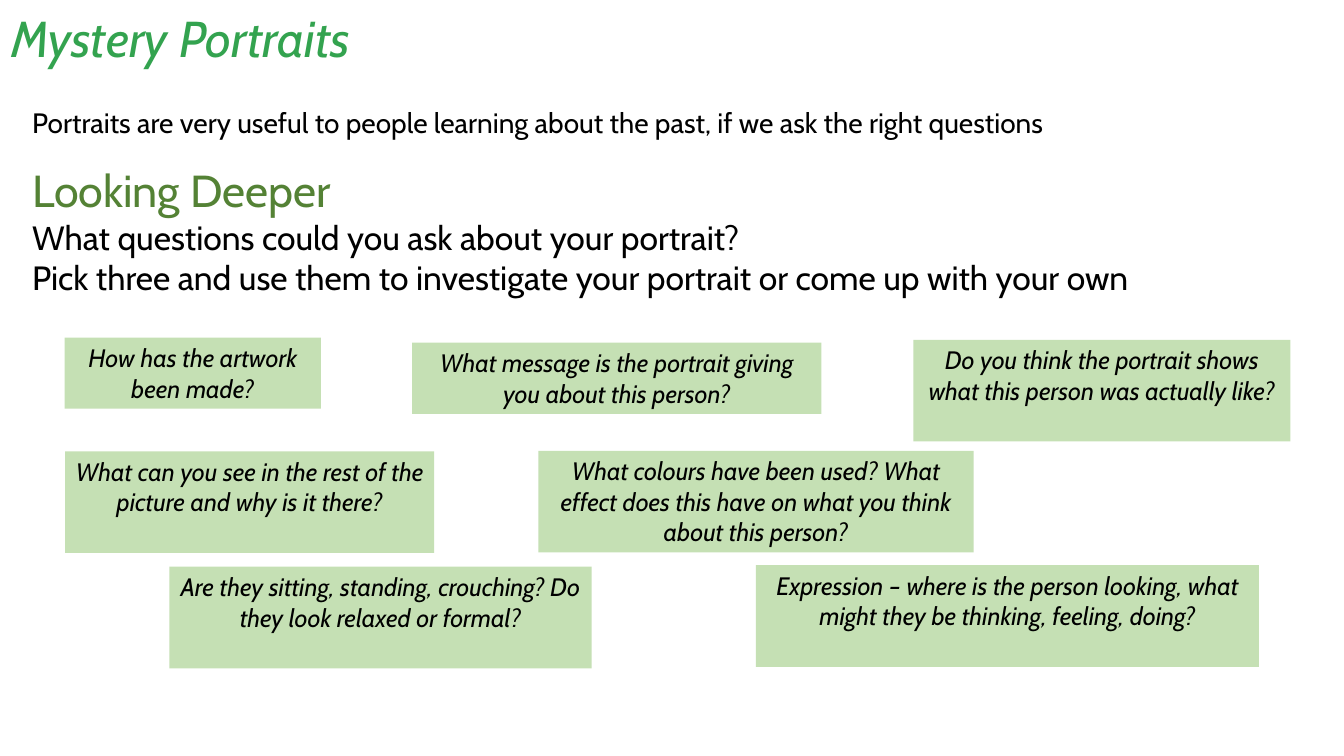
"""Build the Mystery Portraits slide with its question cards."""
from dataclasses import dataclass

from pptx import Presentation
from pptx.dml.color import RGBColor
from pptx.enum.shapes import MSO_SHAPE
from pptx.enum.text import MSO_ANCHOR, MSO_AUTO_SIZE, PP_ALIGN
from pptx.util import Pt

RECTANGLE = MSO_SHAPE.RECTANGLE
TOP = MSO_ANCHOR.TOP
NO_AUTOFIT = MSO_AUTO_SIZE.NONE
LEFT, CENTER = PP_ALIGN.LEFT, PP_ALIGN.CENTER


@dataclass(frozen=True)
class Theme:
    font: str = "Cabin"
    title_color: str = "33A34F"
    heading_color: str = "548235"
    text_color: str = "000000"
    card_color: str = "C5E0B4"
    title_size: int = 36
    heading_size: int = 32
    prompt_size: int = 24
    intro_size: int = 20
    card_size: int = 18


THEME = Theme()
SLIDE_SIZE = (960, 540)
TITLE = "Mystery Portraits"
TITLE_BOX = (0.7, 6.5, 872, 130)
BODY_BOX = (15.8, 72, 929, 254)
BODY = [
    ("Portraits are very useful to people learning about the past, if we ask the right questions",
     {"size": THEME.intro_size}),
    ("Looking Deeper",
     {"size": THEME.heading_size, "color": THEME.heading_color, "space_before": 17}),
    ("What questions could you ask about your portrait?", {"size": THEME.prompt_size}),
    ("Pick three and use them to investigate your portrait or come up with your own",
     {"size": THEME.prompt_size}),
]

# text, left, top, width, line capacity
CARDS = [
    ("How has the artwork been made?", 46.2, 241.2, 183, 2),
    ("What message is the portrait giving you about this person?", 294.5, 244.8, 292.3, 2),
    ("Do you think the portrait shows what this person was actually like?",
     652.4, 242.7, 269.3, 3),
    ("What can you see in the rest of the picture and why is it there?",
     46.6, 322.4, 263.6, 3),
    ("What colours have been used? What effect does this have on what you think "
     "about this person?", 384.5, 322, 311, 3),
    ("Are they sitting, standing, crouching? Do they look relaxed or formal?",
     121, 404.8, 301.6, 3),
    ("Expression – where is the person looking, what might they be thinking, feeling, doing?",
     540, 403.7, 359.3, 3),
]
CARD_LINE, CARD_PADDING = 21.8, 7.2


def write(paragraph, text, size, color=THEME.text_color, italic=False,
          align=LEFT, space_before=0, line_spacing=1.0):
    """Put formatted text into a paragraph."""
    paragraph.alignment = align
    paragraph.space_before = Pt(space_before)
    paragraph.line_spacing = line_spacing
    run = paragraph.add_run()
    run.text = text
    run.font.name = THEME.font
    run.font.size = Pt(size)
    run.font.italic = italic
    run.font.color.rgb = RGBColor.from_string(color)


def prepare_frame(shape):
    """Return a wrapping, top-anchored text frame."""
    frame = shape.text_frame
    frame.auto_size = NO_AUTOFIT
    frame.word_wrap = True
    frame.vertical_anchor = TOP
    return frame


def add_title(slide):
    """Move and fill the title placeholder."""
    title = slide.shapes.title
    title.left, title.top, title.width, title.height = map(Pt, TITLE_BOX)
    write(prepare_frame(title).paragraphs[0], TITLE, THEME.title_size,
          color=THEME.title_color, italic=True, line_spacing=0.9)


def add_body(slide):
    """Add the introduction and the task."""
    frame = prepare_frame(slide.shapes.add_textbox(*map(Pt, BODY_BOX)))
    for index, (text, style) in enumerate(BODY):
        paragraph = frame.add_paragraph() if index else frame.paragraphs[0]
        write(paragraph, text, **style)


def add_card(slide, text, left, top, width, lines):
    """Add one question card, as tall as its line capacity."""
    height = lines * CARD_LINE + CARD_PADDING
    card = slide.shapes.add_shape(RECTANGLE, *map(Pt, (left, top, width, height)))
    card.shadow.inherit = False
    card.fill.solid()
    card.fill.fore_color.rgb = RGBColor.from_string(THEME.card_color)
    card.line.fill.background()
    write(prepare_frame(card).paragraphs[0], text, THEME.card_size,
          italic=True, align=CENTER)


def main():
    """Build and save the presentation."""
    presentation = Presentation()
    presentation.slide_width, presentation.slide_height = map(Pt, SLIDE_SIZE)
    slide = presentation.slides.add_slide(presentation.slide_layouts.get_by_name("Title Only"))
    add_title(slide)
    add_body(slide)
    for card in CARDS:
        add_card(slide, *card)
    presentation.save("out.pptx")


if __name__ == "__main__":
    main()
